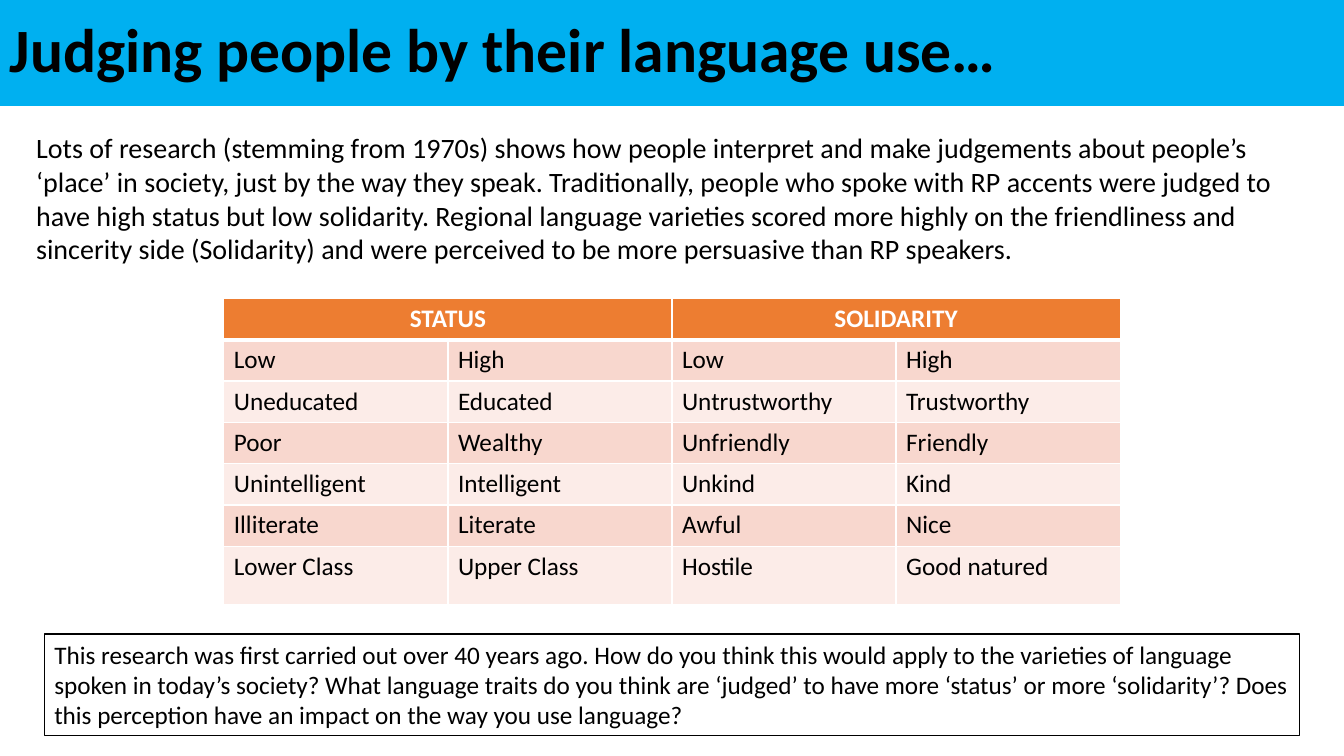
from lxml import etree
from pptx import Presentation
from pptx.dml.color import RGBColor
from pptx.enum import shapes, text
from pptx.oxml.ns import qn
from pptx.util import Inches, Pt

FONT = "Calibri"
BLACK = RGBColor(0x00, 0x00, 0x00)
WHITE = RGBColor(0xFF, 0xFF, 0xFF)
SKY_BLUE = RGBColor(0x00, 0xB0, 0xF0)
ORANGE = RGBColor(0xED, 0x7D, 0x31)
ROW_TINTS = (RGBColor(0xF8, 0xD7, 0xCE), RGBColor(0xFC, 0xEC, 0xE8))

TITLE = "Judging people by their language use…"
INTRODUCTION = (
    "Lots of research (stemming from 1970s) shows how people interpret and make "
    "judgements about people’s ‘place’ in society, just by the way they speak. "
    "Traditionally, people who spoke with RP accents were judged to have high status "
    "but low solidarity. Regional language varieties scored more highly on the "
    "friendliness and sincerity side (Solidarity) and were perceived to be more "
    "persuasive than RP speakers."
)
QUESTIONS = (
    "This research was first carried out over 40 years ago. How do you think this "
    "would apply to the varieties of language spoken in today’s society? What language "
    "traits do you think are ‘judged’ to have more ‘status’ or more ‘solidarity’? Does "
    "this perception have an impact on the way you use language?"
)
HEADINGS = ("STATUS", "SOLIDARITY")
TRAITS = (
    ("Low", "High", "Low", "High"),
    ("Uneducated", "Educated", "Untrustworthy", "Trustworthy"),
    ("Poor", "Wealthy", "Unfriendly", "Friendly"),
    ("Unintelligent", "Intelligent", "Unkind", "Kind"),
    ("Illiterate", "Literate", "Awful", "Nice"),
    ("Lower Class", "Upper Class", "Hostile", "Good natured"),
)


def write(frame, words, size, color=BLACK, bold=False, align=text.PP_ALIGN.LEFT):
    """Put one run in the first paragraph of a frame and return the paragraph."""
    frame.word_wrap = True
    paragraph = frame.paragraphs[0]
    paragraph.alignment = align
    run = paragraph.add_run()
    run.text = words
    run.font.name = FONT
    run.font.size = Pt(size)
    run.font.bold = bold
    run.font.color.rgb = color
    return paragraph


def add_panel(slide, box, fill):
    panel = slide.shapes.add_shape(shapes.MSO_SHAPE.RECTANGLE, *map(Inches, box))
    panel.shadow.inherit = False
    panel.fill.solid()
    panel.fill.fore_color.rgb = fill
    return panel


def add_title_bar(slide, box):
    bar = add_panel(slide, box, SKY_BLUE)
    bar.line.fill.background()
    bar.text_frame.vertical_anchor = text.MSO_ANCHOR.MIDDLE
    paragraph = write(bar.text_frame, TITLE, 44, bold=True)
    paragraph.line_spacing = 0.9


def add_introduction(slide, box):
    introduction = slide.shapes.add_textbox(*map(Inches, box))
    write(introduction.text_frame, INTRODUCTION, 20)


def add_questions(slide, box):
    panel = add_panel(slide, box, WHITE)
    panel.line.color.rgb = BLACK
    panel.line.width = Pt(1)
    panel.text_frame.vertical_anchor = text.MSO_ANCHOR.TOP
    write(panel.text_frame, QUESTIONS, 18)


def set_borders(cell, top, bottom):
    """Draw white borders; top and bottom are widths in points."""
    properties = cell._tc.get_or_add_tcPr()
    widths = (("a:lnL", 1), ("a:lnR", 1), ("a:lnT", top), ("a:lnB", bottom))
    for position, (tag, width) in enumerate(widths):
        line = etree.Element(qn(tag), w=str(Pt(width)))
        fill = etree.SubElement(line, qn("a:solidFill"))
        etree.SubElement(fill, qn("a:srgbClr"), val=str(WHITE))
        properties.insert(position, line)


def add_traits_table(slide, box, row_height):
    """Rows share row_height; the last one takes what is left of the box."""
    left, top, width, height = map(Inches, box)
    row_count, column_count = len(TRAITS) + 1, len(TRAITS[0])
    table = slide.shapes.add_table(
        row_count, column_count, left, top, width, height).table
    for column in table.columns:
        column.width = width // column_count
    for row in table.rows:
        row.height = Inches(row_height)
    table.rows[row_count - 1].height = height - Inches(row_height) * (row_count - 1)

    for row_index, row in enumerate(table.rows):
        for cell in row.cells:
            cell.fill.solid()
            cell.fill.fore_color.rgb = (
                ROW_TINTS[(row_index - 1) % 2] if row_index else ORANGE)
            set_borders(cell, top=3 if row_index == 1 else 1,
                        bottom=1 if row_index else 3)

    span = column_count // len(HEADINGS)
    for index, heading in enumerate(HEADINGS):
        cell = table.cell(0, index * span)
        cell.merge(table.cell(0, index * span + span - 1))
        write(cell.text_frame, heading, 18, WHITE, True, text.PP_ALIGN.CENTER)
    for row_index, traits in enumerate(TRAITS, start=1):
        for column_index, trait in enumerate(traits):
            write(table.cell(row_index, column_index).text_frame, trait, 18)


def main():
    presentation = Presentation()
    presentation.slide_width = Inches(13.33)
    presentation.slide_height = Inches(7.5)
    slide = presentation.slides.add_slide(presentation.slide_layouts[6])
    add_title_bar(slide, (0, 0, 13.33, 1.05))
    add_traits_table(slide, (2.22, 2.96, 8.89, 3.04), row_height=0.41)
    add_introduction(slide, (0.26, 1.25, 12.75, 1.45))
    add_questions(slide, (0.44, 6.29, 12.45, 1.01))
    presentation.save("out.pptx")


if __name__ == "__main__":
    main()
